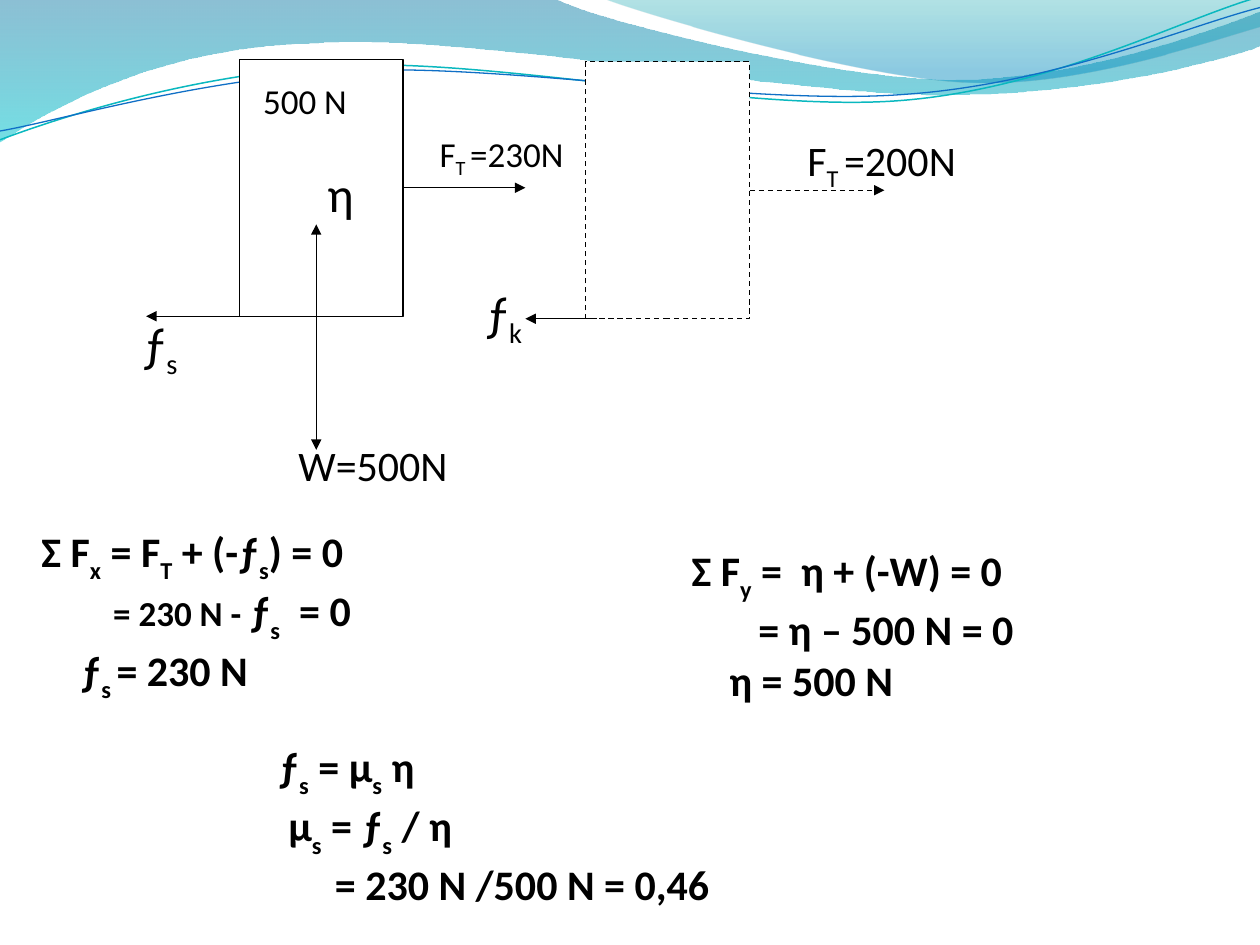
from lxml import etree
from pptx import Presentation
from pptx.dml.color import RGBColor
from pptx.enum import dml, shapes, text
from pptx.oxml.ns import qn
from pptx.util import Inches, Pt

FONT, BLACK, WHITE = "Calibri", "000000", "FFFFFF"

# Outlines: the start point, then straight points (x, y)
# or curves (control 1, control 2, end) as six numbers.
BANDS = [
    ([(0, 0), (4.4, -0.01), (4.76, 0.17, 6.64, 0.63, 7.58, 0.63),
      (8.53, 0.63, 9.58, 0.26, 10, 0.09), (10.01, 0.36),
      (9.83, 0.44, 8.7, 0.76, 7.46, 0.75), (6.22, 0.75, 3.82, 0.28, 2.57, 0.34),
      (1.29, 0.36, 0.46, 0.83, -0.01, 1.13), (0, 0)],
     [(0, "0074A1", 45), (1, "00C6CF", 55)]),
    ([(4.79, -0.01), (5.09, 0.11, 6.82, 0.62, 7.69, 0.65),
      (8.56, 0.69, 9.61, 0.32, 10, 0.21), (10, 0), (4.79, -0.01)],
     [(0, "00A1A9", 30), (0.8, "008BBF", 45)]),
]
WAVES = [
    ([(0, 1.11), (0.48, 0.93, 1.58, 0.57, 2.77, 0.52),
      (3.95, 0.47, 5.93, 0.89, 7.13, 0.8), (8.33, 0.71, 9.38, 0.15, 9.98, -0.02)],
     "0AB8BF", 0.85),
    ([(0, 1.04), (0.47, 0.96, 1.64, 0.61, 2.83, 0.56),
      (4.03, 0.51, 5.97, 0.84, 7.17, 0.75), (8.36, 0.67, 9.41, 0.21, 10, 0.06)],
     "0F6FC6", 0.75),
]

BLOCK_SIZE = (1.3, 2.04)
# left, top, dashed, end of the pulling arrow
BLOCKS = [(1.9, 0.47, False, 4.17), (4.65, 0.49, True, 7.02)]
# start x, start y, end x, end y
FORCES = [
    (1.99, 2.51, 1.16, 2.51),
    (2.51, 2.51, 2.51, 3.57),
    (2.51, 2.53, 2.51, 1.78),
    (4.74, 2.53, 4.17, 2.53),
]
# Between bars stands a subscript.
LABELS = [
    ("500 N", 20, (1.99, 0.58, 1.01, 0.44)),
    ("η", 28, (2.5, 1.25, 0.5, 0.57)),
    ("W=500N", 24, (2.27, 3.44, 1.48, 0.63)),
    ("ƒ|s|", 28, (1.03, 2.44, 0.74, 0.67)),
    ("ƒ|k|", 28, (3.75, 2.19, 0.74, 0.67)),
    ("F|T |=230N", 20, (3.39, 1, 1.39, 0.67)),
    ("F|T |=200N", 24, (6.31, 1.02, 1.7, 0.67)),
]
# Each line: indent, then pieces of (markup, size)
EQUATIONS = [
    ((0.23, 4.12, 3.12, 1.72), text.MSO_ANCHOR.TOP, [
        (0, [("Σ F|x| = F|T| + (-ƒ|s|) = 0", 24)]),
        (0.57, [("= 230 N - ", 20), ("ƒ|s  |", 24), (" ", 20), ("= 0", 24)]),
        (0.31, [("ƒ|s |= 230 N", 24)])]),
    ((5.39, 4.3, 3.59, 1.31), text.MSO_ANCHOR.MIDDLE, [
        (0, [("Σ F|y| =  η + (-W) = 0", 24)]),
        (0.53, [("= η – 500 N = 0", 24)]),
        (0.3, [("η = 500 N", 24)])]),
    ((2.11, 5.89, 3.67, 1.31), text.MSO_ANCHOR.MIDDLE, [
        (0, [("ƒ|s| = μ|s| η", 24)]),
        (0.08, [("μ|s| = ƒ|s| / η", 24)]),
        (0.45, [("= 230 N /500 N = 0,46", 24)])]),
]


def color(value):
    return RGBColor.from_string(value)


def set_line(line, value, width=0.75, dashed=False):
    line.color.rgb = color(value)
    line.width = Pt(width)
    if dashed:
        line.dash_style = dml.MSO_LINE.DASH


def add_outline(slide, outline, close):
    """Draw through all points, then merge each curve's three segments into a Bézier."""
    points = [(Inches(part[i]), Inches(part[i + 1]))
              for part in outline for i in range(0, len(part), 2)]
    builder = slide.shapes.build_freeform(*points[0])
    builder.add_line_segments(points[1:], close=close)
    shape = builder.convert_to_shape()
    shape.shadow.inherit = False
    segments = iter(list(shape._element.iter(qn("a:lnTo"))))
    for part in outline[1:]:
        segment = next(segments)
        if len(part) == 6:
            segment.tag = qn("a:cubicBezTo")
            for _ in range(2):
                extra = next(segments)
                segment.append(extra[0])
                extra.getparent().remove(extra)
    return shape


def add_band(slide, outline, stops):
    shape = add_outline(slide, outline, True)
    shape.line.fill.background()
    shape.fill.gradient()
    shape.fill.gradient_angle = 270
    for stop, (position, value, _) in zip(shape.fill.gradient_stops, stops):
        stop.position = position
        stop.color.rgb = color(value)
    colors = shape._element.spPr.iter(qn("a:srgbClr"))
    for element, (_, _, opacity) in zip(list(colors), stops):
        etree.SubElement(element, qn("a:alpha"), val=str(opacity * 1000))


def add_block(slide, left, top, dashed):
    block = slide.shapes.add_shape(shapes.MSO_SHAPE.RECTANGLE,
                                   *map(Inches, (left, top, *BLOCK_SIZE)))
    block.shadow.inherit = False
    block.fill.solid()
    block.fill.fore_color.rgb = color(WHITE)
    set_line(block.line, BLACK, dashed=dashed)
    return block


def add_arrow(slide, ends, dashed=False):
    arrow = slide.shapes.add_connector(shapes.MSO_CONNECTOR.STRAIGHT, *map(Inches, ends))
    set_line(arrow.line, BLACK, dashed=dashed)
    etree.SubElement(arrow.line._get_or_add_ln(), qn("a:tailEnd"), type="triangle")
    etree.SubElement(arrow._element.spPr, qn("a:effectLst"))
    return arrow


def add_text(slide, box, lines, anchor=text.MSO_ANCHOR.TOP, bold=False):
    frame = slide.shapes.add_textbox(*map(Inches, box)).text_frame
    frame.word_wrap = True
    frame.vertical_anchor = anchor
    for number, (indent, pieces) in enumerate(lines):
        paragraph = frame.add_paragraph() if number else frame.paragraphs[0]
        if indent:
            paragraph._p.get_or_add_pPr().set("marL", str(Inches(indent)))
        for markup, size in pieces:
            for index, part in enumerate(markup.split("|")):
                if not part:
                    continue
                run = paragraph.add_run()
                run.text = part
                run.font.name, run.font.size, run.font.bold = FONT, Pt(size), bold
                run.font.color.rgb = color(BLACK)
                if index % 2:
                    run._r.get_or_add_rPr().set("baseline", "-30000" if bold else "-25000")


def main():
    presentation = Presentation()
    presentation.slide_width, presentation.slide_height = Inches(10), Inches(7.5)
    slide = presentation.slides.add_slide(presentation.slide_layouts[6])

    for outline, stops in BANDS:
        add_band(slide, outline, stops)
    for outline, value, width in WAVES:
        wave = add_outline(slide, outline, False)
        wave.fill.background()
        set_line(wave.line, value, width)

    for left, top, dashed, pull_end in BLOCKS:
        block = add_block(slide, left, top, dashed)
        middle = top + BLOCK_SIZE[1] / 2
        pull = add_arrow(slide, (left + BLOCK_SIZE[0], middle, pull_end, middle), dashed)
        pull.begin_connect(block, 3)
    for ends in FORCES:
        add_arrow(slide, ends)

    for markup, size, box in LABELS:
        add_text(slide, box, [(0, [(markup, size)])])
    for box, anchor, lines in EQUATIONS:
        add_text(slide, box, lines, anchor, bold=True)

    presentation.save("out.pptx")


if __name__ == "__main__":
    main()
